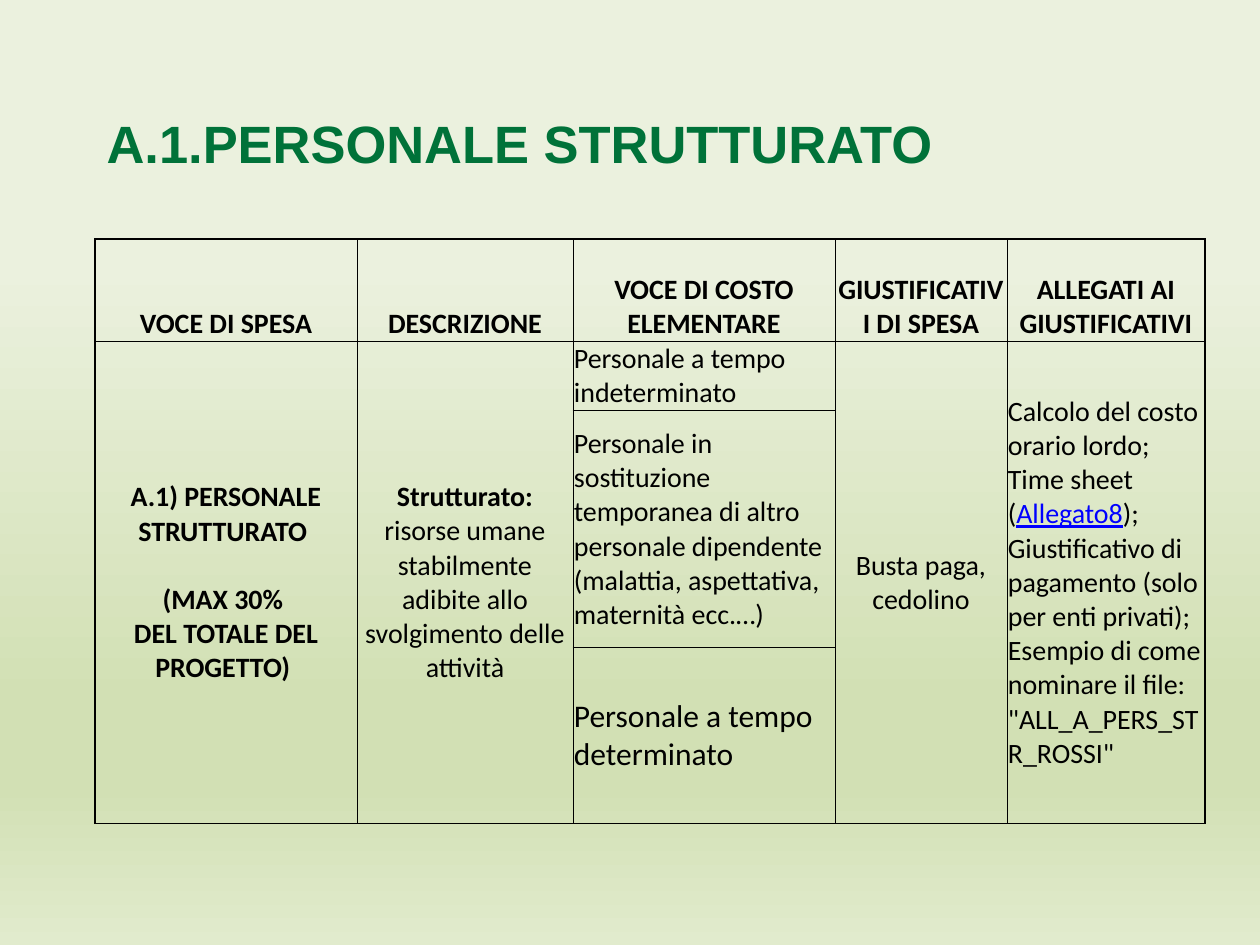
"""Build the slide on permanent staff costs."""
from lxml.etree import SubElement
from pptx import Presentation
from pptx.dml.color import RGBColor
from pptx.enum.text import MSO_ANCHOR as Anchor, PP_ALIGN as Align
from pptx.oxml import parse_xml
from pptx.oxml.ns import nsdecls, qn
from pptx.util import Emu, Pt

COLORS = {"green": "007239", "black": "000000", "link": "0000FF",
          "pale": "EBF1DE", "olive": "D2E0B4", "light": "E1EBCD"}
BACKDROP = [(28, "pale"), (74, "olive"), (83, "olive"), (100, "light")]
COLUMNS = [262, 216, 262, 172, 198]
ROWS = [102, 68, 237, 176]
HEADERS = ["VOCE DI SPESA", "DESCRIZIONE", "VOCE DI COSTO ELEMENTARE",
           "GIUSTIFICATIVI DI SPESA", "ALLEGATI AI GIUSTIFICATIVI"]
BOLD = {"bold": True}
LINK = {"color": "link", "underline": True}
CENTER = {"alignment": Align.CENTER}
GAP = {"alignment": Align.CENTER, "space_before": Pt(19.5)}
BODY = {
    (1, 0): [(CENTER, [("A.1) PERSONALE STRUTTURATO ", BOLD)]),
             (GAP, [("(MAX 30% ", BOLD)]),
             (CENTER, [("DEL TOTALE DEL PROGETTO) ", BOLD)])],
    (1, 1): [(CENTER, [("Strutturato: ", BOLD),
                       ("risorse umane stabilmente adibite allo "
                        "svolgimento delle attività", {})])],
    (1, 2): [({}, [("Personale a tempo indeterminato", {})])],
    (2, 2): [({}, [("Personale in sostituzione temporanea di altro personale "
                    "dipendente (malattia, aspettativa, maternità ecc.…)", {})])],
    (3, 2): [({}, [("Personale a tempo determinato", {"size": Pt(18)})])],
    (1, 3): [(CENTER, [("Busta paga, cedolino", {})])],
    (1, 4): [({}, [("Calcolo del costo orario lordo; Time sheet (", {}),
                   ("Allegato8", LINK),
                   ("); Giustificativo di pagamento (solo per enti privati); "
                    "Esempio di come nominare il file: "
                    '"ALL_A_PERS_STR_ROSSI"', {})])],
}


def px(length):
    """Turn pixels into EMU."""
    return Emu(round(length * 914400 / 126))


def apply(target, values):
    """Set every attribute named in a dict of format values."""
    for name, value in values.items():
        setattr(target, name, value)


class Page:
    """Hold the style and the current slide."""

    base = {"name": "Calibri", "size": Pt(16), "color": "black", "bold": False}

    def __init__(self, deck):
        """Add a slide with a title and no subtitle."""
        self.slide = deck.slides.add_slide(deck.slide_layouts[0])
        subtitle = self.slide.placeholders[1].element
        subtitle.getparent().remove(subtitle)

    def backdrop(self, stops):
        """Paint a vertical gradient behind the slide."""
        fill = self.slide.background.fill
        fill.gradient()
        fill.gradient_angle = 270
        stop_list = next(self.slide.element.iter(qn("a:gsLst")))
        for old in list(stop_list):
            stop_list.remove(old)
        for position, color in stops:
            stop = SubElement(stop_list, qn("a:gs"), pos=str(position * 1000))
            SubElement(stop, qn("a:srgbClr"), val=COLORS[color])

    def add_span(self, para, text, values):
        """Add one formatted span to a paragraph."""
        span = para.add_run()
        span.text = text
        style = self.base | values
        span.font.color.rgb = RGBColor.from_string(COLORS[style.pop("color")])
        apply(span.font, style)

    def title(self, text, frame, values):
        """Place and fill the title placeholder."""
        box = self.slide.shapes.title
        apply(box, dict(zip(("left", "top", "width", "height"), map(px, frame))))
        box.text_frame.vertical_anchor = Anchor.MIDDLE
        para = box.text_frame.paragraphs[0]
        para.alignment = Align.LEFT
        self.add_span(para, text, values)

    def border(self, cell, widths):
        """Draw the four borders of a cell, widths in points."""
        for side, width in widths.items():
            cell._tc.get_or_add_tcPr().append(parse_xml(
                f'<a:ln{side} {nsdecls("a")} w="{Pt(width)}"><a:solidFill>'
                f'<a:srgbClr val="{COLORS["black"]}"/></a:solidFill></a:ln{side}>'))

    def table(self, left, top, columns, rows, content, merged):
        """Add a ruled table without fills."""
        table = self.slide.shapes.add_table(
            len(rows), len(columns), px(left), px(top),
            px(sum(columns)), px(sum(rows))).table
        apply(table, {"first_row": False, "horz_banding": False})
        for column, width in zip(table.columns, columns):
            column.width = px(width)
        for row, height in zip(table.rows, rows):
            row.height = px(height)
        last = len(columns) - 1
        for r in range(len(rows)):
            for c in range(len(columns)):
                cell = table.cell(r, c)
                self.border(cell, {"L": 0.5 if c else 1, "R": 1 if c == last else 0.5,
                                   "T": 0.5 if r else 1, "B": 0.5})
                cell.fill.background()
                apply(cell, {"margin_left": px(1), "margin_right": px(1),
                             "margin_top": px(1), "margin_bottom": 0,
                             "vertical_anchor": Anchor.MIDDLE if r else Anchor.BOTTOM})
                self.fill_cell(cell, content.get((r, c), []))
        for c in merged:
            table.cell(1, c).merge(table.cell(len(rows) - 1, c))

    def fill_cell(self, cell, paragraphs):
        """Fill a cell with its paragraphs."""
        frame = cell.text_frame
        for index, (layout, spans) in enumerate(paragraphs):
            para = frame.add_paragraph() if index else frame.paragraphs[0]
            apply(para, layout)
            for text, values in spans:
                self.add_span(para, text, values)


def main():
    """Build and save the deck."""
    deck = Presentation()
    apply(deck, {"slide_width": px(1260), "slide_height": px(945)})
    page = Page(deck)
    page.backdrop(BACKDROP)
    page.title("A.1.PERSONALE STRUTTURATO", (94, 91, 1071, 103),
               {"name": "Arial", "size": Pt(30), "color": "green", "bold": True})
    header = {(0, c): [(CENTER, [(text, BOLD)])] for c, text in enumerate(HEADERS)}
    page.table(95, 239, COLUMNS, ROWS, header | BODY, merged=(0, 1, 3, 4))
    deck.save("out.pptx")


if __name__ == "__main__":
    main()
